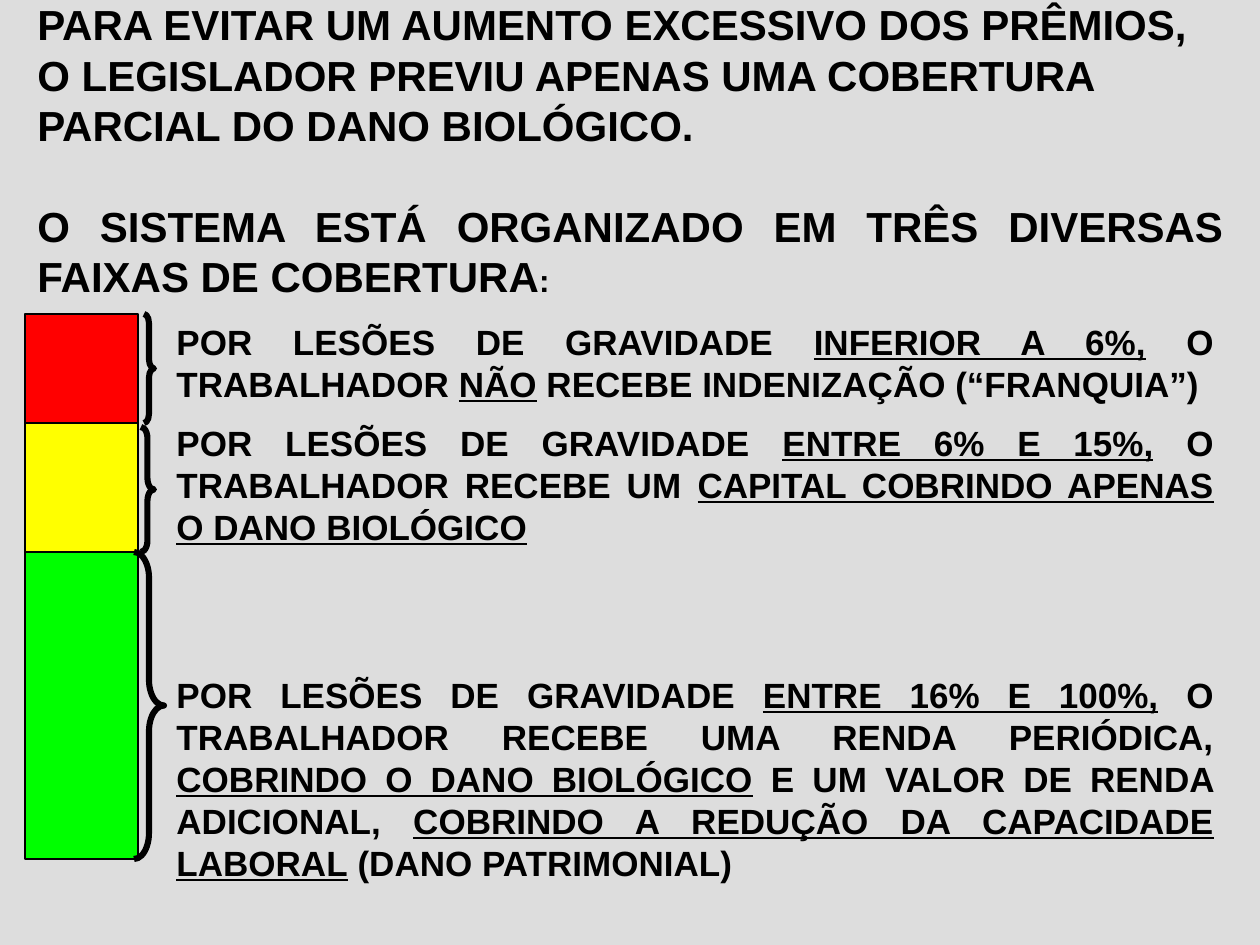
from pptx import Presentation
from pptx.dml.color import RGBColor
from pptx.enum.shapes import MSO_SHAPE
from pptx.enum.text import MSO_ANCHOR, PP_ALIGN
from pptx.util import Pt

HUES = {"back": "DDDDDD", "ink": "000000", "low": "FF0000", "mid": "FFFF00", "high": "00FF00"}

TITLE = [
    (PP_ALIGN.LEFT, 0, [("PARA EVITAR UM AUMENTO EXCESSIVO DOS PRÊMIOS, O LEGISLADOR PREVIU "
                         "APENAS UMA COBERTURA PARCIAL DO DANO BIOLÓGICO.", {})]),
    (PP_ALIGN.JUSTIFY, 28.8, [("O SISTEMA ESTÁ ORGANIZADO EM TRÊS DIVERSAS FAIXAS DE COBERTURA", {}),
                              (":", {"size": Pt(18)})]),
]
LINE = {"underline": True}
BODY = [
    (PP_ALIGN.JUSTIFY, 0, [
        ("POR LESÕES DE GRAVIDADE ", {}), ("INFERIOR A 6%,", LINE), (" O TRABALHADOR ", {}),
        ("NÃO", LINE), (" RECEBE INDENIZAÇÃO (“FRANQUIA”)", {})]),
    (PP_ALIGN.JUSTIFY, 9.6, [
        ("POR LESÕES DE GRAVIDADE ", {}), ("ENTRE 6% E 15%,", LINE),
        (" O TRABALHADOR RECEBE UM ", {}), ("CAPITAL COBRINDO APENAS O DANO BIOLÓGICO", LINE)]),
    (PP_ALIGN.JUSTIFY, 72, [
        ("POR LESÕES DE GRAVIDADE ", {}), ("ENTRE 16% E 100%,", LINE),
        (" O TRABALHADOR RECEBE UMA RENDA PERIÓDICA, ", {}), ("COBRINDO O DANO BIOLÓGICO", LINE),
        (" E UM VALOR DE RENDA ADICIONAL, ", {}),
        ("COBRINDO A REDUÇÃO DA CAPACIDADE LABORAL", LINE), (" (DANO PATRIMONIAL)", {})]),
]
TEXTS = [
    ((25, 26, 1211, 248), 24, MSO_ANCHOR.MIDDLE, TITLE),
    ((164, 314, 1062, 533), 20, MSO_ANCHOR.TOP, BODY),
]
BANDS = [("low", 109), ("mid", 129), ("high", 307)]
BRACES = [((144, 314, 10, 109), 0.9), ((141, 427, 13, 125), 0.87), ((134, 552, 30, 307), 0.86)]


def px(n):
    return round(n * 914400 / 126)


def tint(name):
    return RGBColor.from_string(HUES[name])


def put(obj, form):
    for key, val in form.items():
        setattr(obj, key, val)


def write(box, size, anchor, paras):
    frame = slide.shapes.add_textbox(*map(px, box)).text_frame
    put(frame, {"word_wrap": True, "vertical_anchor": anchor})
    for i, (align, gap, runs) in enumerate(paras):
        para = frame.paragraphs[0] if i == 0 else frame.add_paragraph()
        put(para, {"alignment": align, "space_before": Pt(gap), "line_spacing": Pt(size * 1.2)})
        for text, form in runs:
            run = para.add_run()
            run.text = text
            put(run.font, {"name": "Arial", "size": Pt(size), "bold": True, **form})
            run.font.color.rgb = tint("ink")


def draw(kind, box, width, fill=None):
    shape = slide.shapes.add_shape(kind, *map(px, box))
    shape.shadow.inherit = False
    if fill:
        shape.fill.solid()
        shape.fill.fore_color.rgb = tint(fill)
    else:
        shape.fill.background()
    shape.line.color.rgb = tint("ink")
    shape.line.width = Pt(width)
    return shape


deck = Presentation()
put(deck, {"slide_width": px(1260), "slide_height": px(945)})
slide = deck.slides.add_slide(deck.slide_layouts[6])
slide.background.fill.solid()
slide.background.fill.fore_color.rgb = tint("back")

for text in TEXTS:
    write(*text)

top = 314
for name, high in BANDS:
    draw(MSO_SHAPE.RECTANGLE, (25, top, 113, high), 0.75, name)
    top += high

for box, bend in BRACES:
    draw(MSO_SHAPE.RIGHT_BRACE, box, 3.5).adjustments[0] = bend

deck.save("out.pptx")
